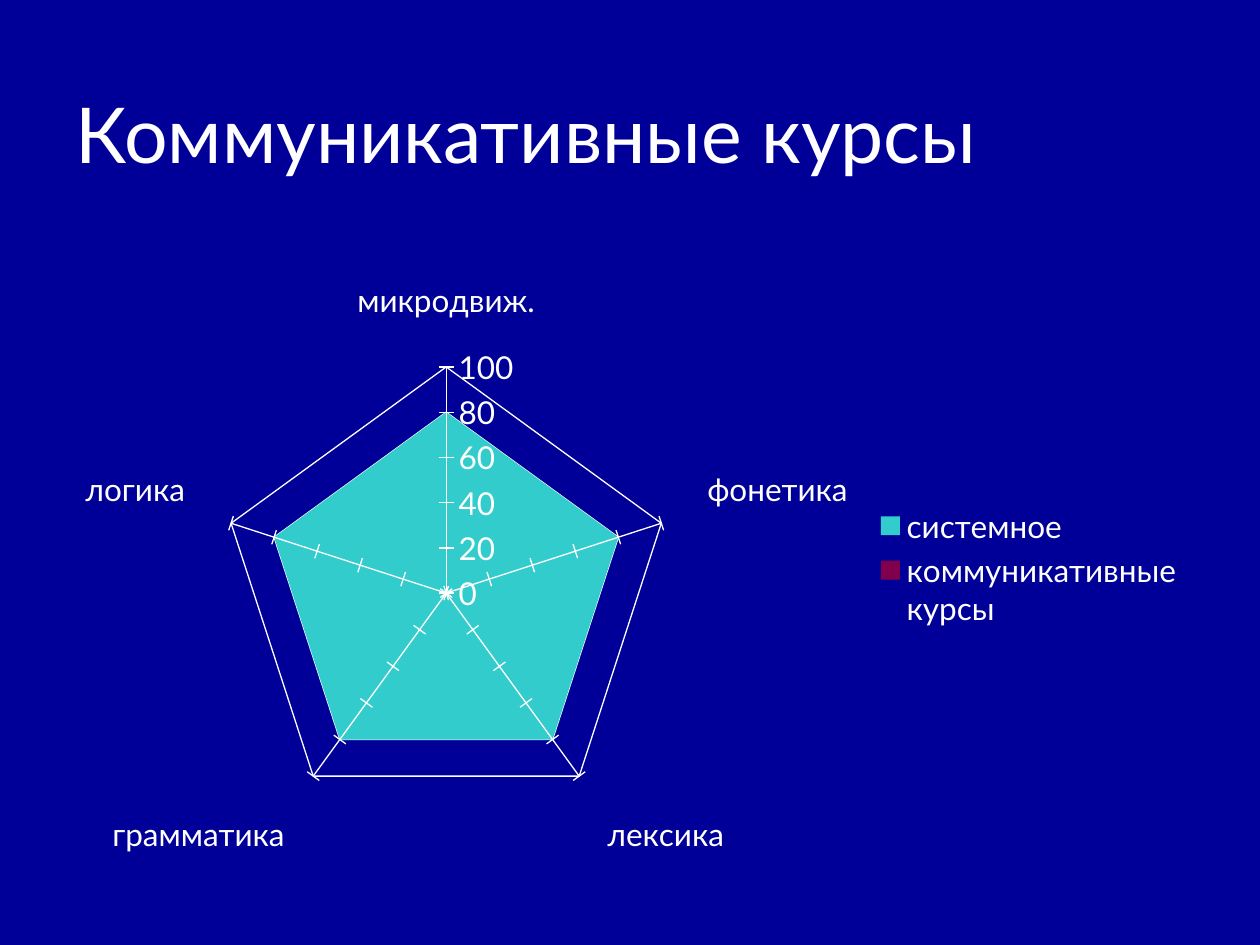
from lxml import etree
from pptx import Presentation
from pptx import util as u
from pptx.chart import data as chart_data
from pptx.dml.color import RGBColor
from pptx.enum import chart as charts, text
from pptx.oxml import ns

COLORS = {
    "background": "000099",
    "text": "FFFFFF",
    "system": "33CCCC",
    "communicative": "FF0000",
}
SKILLS = ["микродвиж.", "фонетика", "лексика", "грамматика", "логика"]
COURSES = [
    # name, scores, colour, opacity in percent
    ("системное", [80, 80, 80, 80, 80], "system", 100),
    ("коммуникативные курсы", [80, 70, 70, 50, 50], "communicative", 50),
]


class SlideBuilder:
    FONT = "Lato"
    TITLE_SIZE = 44
    CHART_SIZE = 18

    def __init__(self, deck):
        self.deck = deck
        self.page = deck.slides.add_slide(deck.slide_layouts[5])
        self.paint(self.page.background.fill, "background")

    def paint(self, fill, color):
        fill.solid()
        fill.fore_color.rgb = RGBColor.from_string(COLORS[color])

    def style_font(self, font, size):
        font.name = self.FONT
        font.size = u.Pt(size)
        font.bold = False
        font.color.rgb = RGBColor.from_string(COLORS["text"])

    def place(self, left, top, width, height):
        """Turn shares of the slide's size into lengths."""
        across, down = self.deck.slide_width, self.deck.slide_height
        return (u.Emu(round(left * across)), u.Emu(round(top * down)),
                u.Emu(round(width * across)), u.Emu(round(height * down)))

    def title(self, words, *shares):
        box = self.page.shapes.title
        box.left, box.top, box.width, box.height = self.place(*shares)
        box.text_frame.vertical_anchor = text.MSO_ANCHOR.MIDDLE
        para = box.text_frame.paragraphs[0]
        para.alignment = text.PP_ALIGN.LEFT
        span = para.add_run()
        span.text = words
        self.style_font(span.font, self.TITLE_SIZE)

    def radar(self, categories, series_rows, *shares):
        data = chart_data.CategoryChartData()
        data.categories = categories
        for name, values, _, _ in series_rows:
            data.add_series(name, values)
        chart = self.page.shapes.add_chart(
            charts.XL_CHART_TYPE.RADAR_FILLED, *self.place(*shares), data).chart
        self.style_font(chart.font, self.CHART_SIZE)
        chart.has_title = False
        chart.has_legend = True
        chart.legend.position = charts.XL_LEGEND_POSITION.RIGHT
        chart.legend.include_in_layout = False
        plot = chart.plots[0]
        plot.vary_by_categories = False
        for series, (_, _, color, opacity) in zip(plot.series, series_rows):
            self.paint(series.format.fill, color)
            series.format.line.fill.background()
            if opacity < 100:
                self.set_opacity(series, opacity)
        scale = chart.value_axis
        scale.minimum_scale, scale.maximum_scale, scale.major_unit = 0, 100, 20
        for axis in (chart.category_axis, scale):
            axis.major_tick_mark = charts.XL_TICK_MARK.CROSS
            axis.has_major_gridlines = True
            for line in (axis.format.line, axis.major_gridlines.format.line):
                self.paint(line.fill, "text")
                line.width = u.Pt(0.75)

    def set_opacity(self, series, percent):
        color = series._element.find(
            "/".join(map(ns.qn, ("c:spPr", "a:solidFill", "a:srgbClr"))))
        etree.SubElement(color, ns.qn("a:alpha"), val=str(percent * 1000))


def main():
    deck = Presentation()
    deck.slide_width, deck.slide_height = u.Inches(10), u.Inches(7.5)
    slide = SlideBuilder(deck)
    slide.title("Коммуникативные курсы", 0.05, 0.04, 0.9, 0.2)
    slide.radar(SKILLS, COURSES, 0.05, 0.2, 0.9, 0.8)
    deck.save("out.pptx")


if __name__ == "__main__":
    main()
